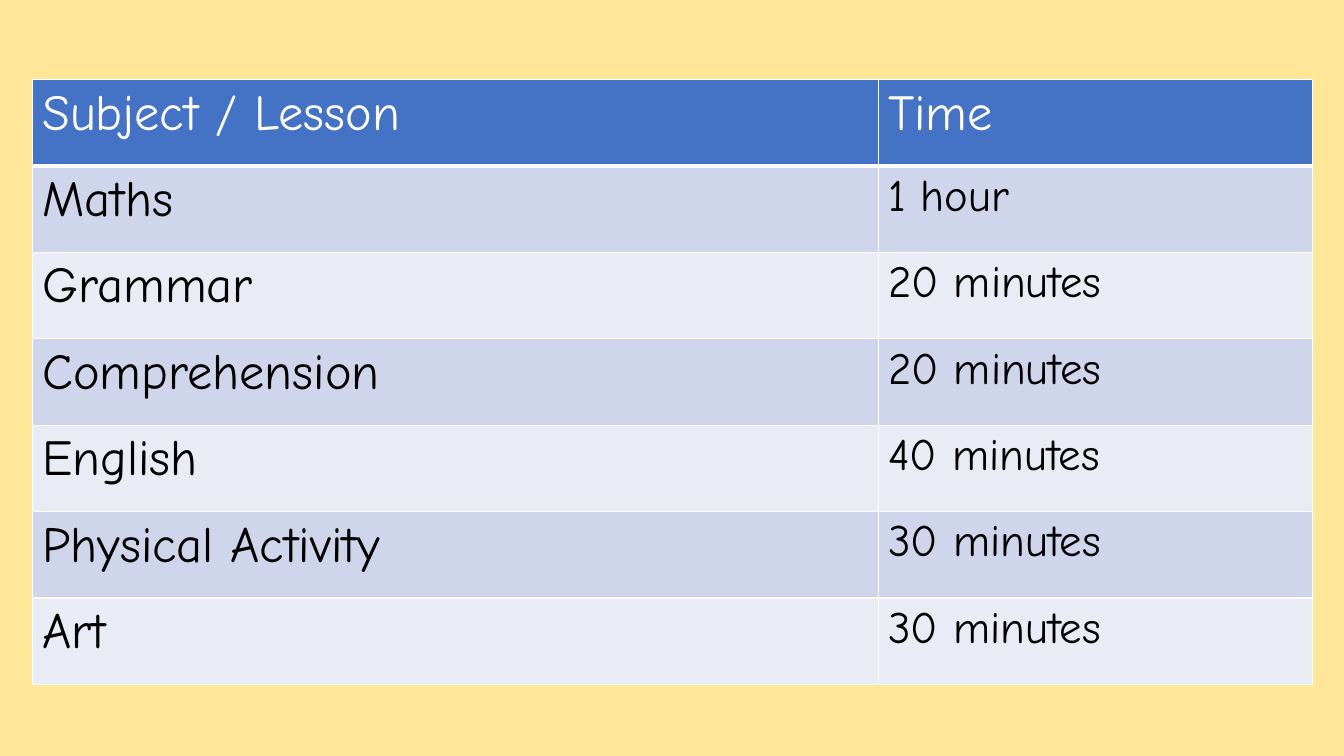
from lxml import etree
from pptx import Presentation
from pptx.dml.color import RGBColor
from pptx.oxml.ns import qn
from pptx.util import Inches, Pt

# Content
HEADINGS = ("Subject / Lesson", "Time")
LESSONS = [
    ("Maths", "1 hour"),
    ("Grammar", "20 minutes"),
    ("Comprehension", "20 minutes"),
    ("English", "40 minutes"),
    ("Physical Activity", "30 minutes"),
    ("Art", "30 minutes"),
]

THEME = {
    "font": "Comic Neue",
    "background": "FFE699",
    "header_fill": "4472C4",
    "header_text": "FFFFFF",
    "body_text": "000000",
    "bands": ("CFD5EA", "E9EBF5"),
    "border": "FFFFFF",
    "border_width": 1,
    "header_rule": 3,
    "large": 36,
    "small": 32,
}

# Layout in inches
LEFT, TOP, HEIGHT = 0.32, 0.79, 6
COLUMN_WIDTHS = (8.39, 4.31)


def write_text(cell, wording, *, size, color):
    run = cell.text_frame.paragraphs[0].add_run()
    run.text = wording
    run.font.name = THEME["font"]
    run.font.size = Pt(size)
    run.font.bold = False
    run.font.color.rgb = RGBColor.from_string(color)


def draw_borders(cell, bottom):
    properties = cell._tc.get_or_add_tcPr()
    for side in ("L", "R", "T", "B"):
        width = bottom if side == "B" else THEME["border_width"]
        line = etree.SubElement(properties, qn(f"a:ln{side}"), w=str(Pt(width)))
        fill = etree.SubElement(line, qn("a:solidFill"))
        etree.SubElement(fill, qn("a:srgbClr"), val=THEME["border"])


def fill_cell(cell, color):
    cell.fill.solid()
    cell.fill.fore_color.rgb = RGBColor.from_string(color)


def main():
    prs = Presentation()
    prs.slide_width, prs.slide_height = Inches(13.33), Inches(7.5)
    slide = prs.slides.add_slide(prs.slide_layouts[6])
    background = slide.background.fill
    background.solid()
    background.fore_color.rgb = RGBColor.from_string(THEME["background"])

    # Timetable
    rows = [HEADINGS, *LESSONS]
    timetable = slide.shapes.add_table(
        len(rows), len(HEADINGS), Inches(LEFT), Inches(TOP),
        Inches(sum(COLUMN_WIDTHS)), Inches(HEIGHT),
    ).table
    for column, width in zip(timetable.columns, COLUMN_WIDTHS):
        column.width = Inches(width)

    # Header row, then alternating bands
    for r, row in enumerate(rows):
        header = r == 0
        fill = THEME["header_fill"] if header else THEME["bands"][(r - 1) % 2]
        color = THEME["header_text"] if header else THEME["body_text"]
        rule = THEME["header_rule"] if header else THEME["border_width"]
        for c, wording in enumerate(row):
            cell = timetable.cell(r, c)
            size = THEME["large"] if header or c == 0 else THEME["small"]
            write_text(cell, wording, size=size, color=color)
            draw_borders(cell, rule)
            fill_cell(cell, fill)

    prs.save("out.pptx")


if __name__ == "__main__":
    main()
